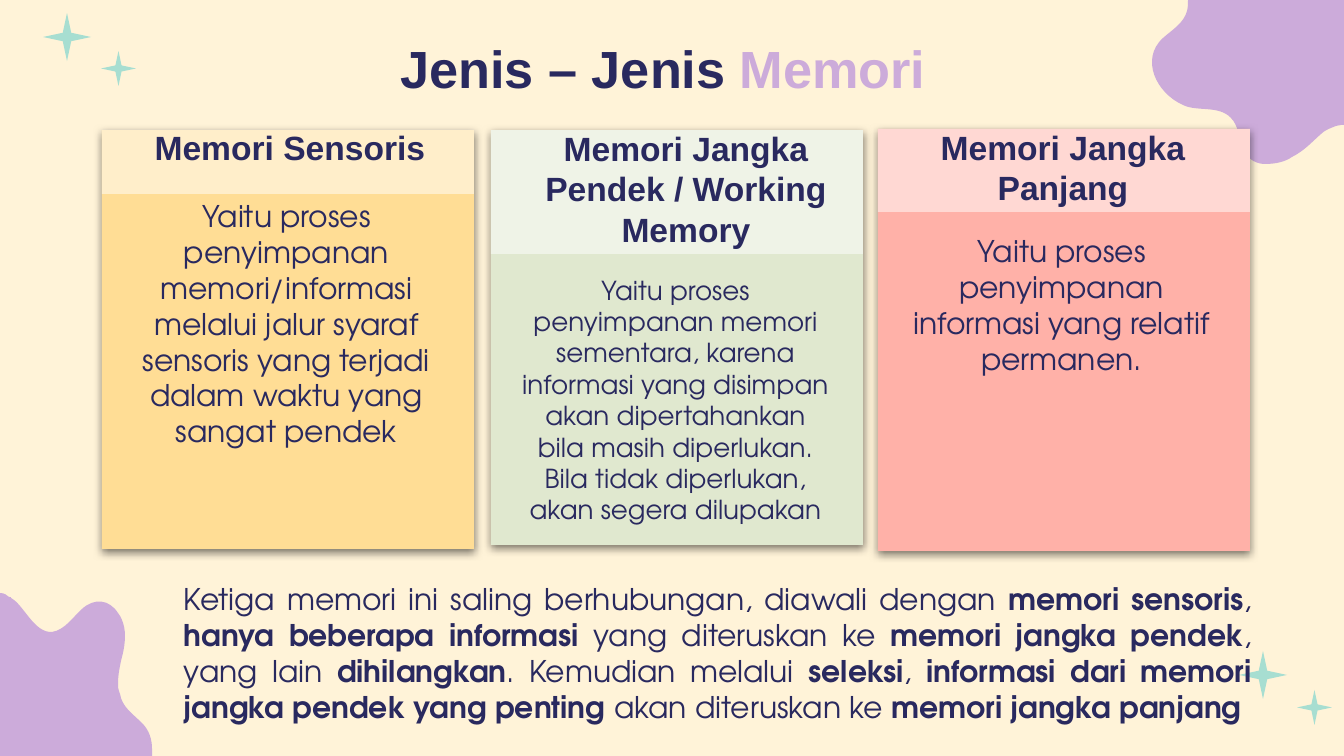
from lxml import etree
from pptx import Presentation
from pptx.dml.color import RGBColor
from pptx.enum.shapes import MSO_SHAPE
from pptx.enum.text import MSO_ANCHOR, PP_ALIGN
from pptx.oxml import parse_xml
from pptx.oxml.ns import nsdecls, qn
from pptx.util import Pt

RECT, STAR = MSO_SHAPE.RECTANGLE, MSO_SHAPE.STAR_4_POINT
CENTER, JUSTIFY = PP_ALIGN.CENTER, PP_ALIGN.JUSTIFY
TOP = MSO_ANCHOR.TOP

PX = 914400 / 134.4
WIDTH, HEIGHT = 1344, 756
CREAM, NAVY, LILAC, MINT, WHITE = "FFF3D8", "29295F", "CCABDA", "A7DED1", "FFFFFF"
HEAD_FONT, BODY_FONT = "Arial", "TeX Gyre Adventor"
INSET = 13
CARD_W, HEAD_W, BODY_W = 372, 358, 335

# Each blob: start point, Bézier segments (two handles and an end), closing corners
BLOBS = [
    ((152, 749), [
        ((152, 739), (149, 730), (142, 723)), ((133, 714), (122, 707), (120, 694)),
        ((118, 689), (118, 687), (118, 683)), ((118, 675), (120, 665), (122, 657)),
        ((124, 650), (125, 642), (125, 636)), ((125, 630), (124, 625), (122, 620)),
        ((121, 617), (120, 616), (118, 613)), ((109, 599), (94, 598), (82, 609)),
        ((73, 617), (65, 630), (52, 632)), ((34, 633), (24, 605), (11, 598)),
        ((11, 597), (11, 597), (9, 597)), ((7, 595), (4, 593), (0, 593)),
    ], [(0, 756), (152, 756)]),
    ((1188, 0), [
        ((1188, 4), (1188, 7), (1187, 11)), ((1184, 23), (1172, 30), (1163, 38)),
        ((1140, 59), (1156, 93), (1183, 105)), ((1197, 112), (1219, 105), (1231, 118)),
        ((1239, 126), (1239, 140), (1245, 151)), ((1247, 157), (1253, 163), (1263, 164)),
        ((1265, 164), (1265, 164), (1266, 164)), ((1275, 164), (1285, 162), (1292, 157)),
        ((1304, 151), (1312, 142), (1321, 134)), ((1325, 130), (1331, 128), (1336, 126)),
        ((1337, 126), (1340, 125), (1341, 125)), ((1343, 125), (1343, 125), (1344, 125)),
    ], [(1344, 0)]),
]

STARS = [(43, 13, 48), (101, 51, 35), (1239, 651, 48), (1297, 690, 35)]

CARDS = [
    dict(box=(102, 130, 419), head_h=64, fill="FFDD95",
         head="Memori Sensoris", head_box=(111, 114, 62),
         body="Yaitu proses penyimpanan memori/informasi melalui jalur syaraf "
              "sensoris yang terjadi dalam waktu yang sangat pendek",
         body_box=(119, 185, 286), size=16),
    dict(box=(491, 130, 415), head_h=124, fill="E0E8CF",
         head="Memori Jangka Pendek / Working Memory", head_box=(507, 115, 149),
         body="Yaitu proses penyimpanan memori sementara, karena informasi yang "
              "disimpan akan dipertahankan bila masih diperlukan. Bila tidak "
              "diperlukan, akan segera dilupakan",
         body_box=(508, 261, 121), size=14),
    dict(box=(878, 129, 422), head_h=83, fill="FFB1A8",
         head="Memori Jangka Panjang", head_box=(884, 114, 112),
         body="Yaitu proses penyimpanan informasi yang relatif permanen.",
         body_box=(894, 220, 121), size=16),
]

TITLE = [("Jenis – Jenis ", True, NAVY), ("Memori", True, LILAC)]
# Text between ** marks is bold
SUMMARY = ("Ketiga memori ini saling berhubungan, diawali dengan **memori sensoris**, "
           "**hanya beberapa informasi **yang diteruskan ke **memori jangka pendek**, "
           "yang lain **dihilangkan**. Kemudian melalui **seleksi**, **informasi dari "
           "memori jangka pendek yang penting **akan diteruskan ke "
           "**memori jangka panjang")


def px(n):
    return round(n * PX)


def rgb(color):
    return RGBColor.from_string(color)


def paint(s, color):
    s.shadow.inherit = False
    s.fill.solid()
    s.fill.fore_color.rgb = rgb(color)
    s.line.fill.background()
    return s


def add_shape(kind, x, y, w, h, color):
    return paint(slide.shapes.add_shape(kind, px(x), px(y), px(w), px(h)), color)


def add_blob(start, curves, corners):
    """Build the outline from straight segments, then join each three into a curve."""
    points = [point for curve in curves for point in curve] + corners
    builder = slide.shapes.build_freeform(*start, scale=PX)
    builder.add_line_segments(points, close=True)
    s = paint(builder.convert_to_shape(), LILAC)
    lines = list(s._element.iter(qn("a:lnTo")))
    for i in range(0, 3 * len(curves), 3):
        curve = etree.Element(qn("a:cubicBezTo"))
        lines[i].addprevious(curve)
        for line in lines[i:i + 3]:
            curve.append(line[0])
            line.getparent().remove(line)


def add_drop_shadow(s):
    effects = s._element.spPr.find(qn("a:effectLst"))
    effects.append(parse_xml(
        f'<a:outerShdw {nsdecls("a")} blurRad="57150" dist="19050" dir="5400000" '
        'algn="bl" rotWithShape="0"><a:srgbClr val="000000">'
        '<a:alpha val="50000"/></a:srgbClr></a:outerShdw>'))


def make_half_transparent(s):
    color = s._element.spPr.find(qn("a:solidFill"))[0]
    etree.SubElement(color, qn("a:alpha")).set("val", "50000")


def add_text(x, y, w, h, runs, font, size, align=CENTER, indent=0):
    """Add one paragraph; runs are (text, bold, color)."""
    tf = slide.shapes.add_textbox(px(x), px(y), px(w), px(h)).text_frame
    tf.word_wrap = True
    tf.vertical_anchor = TOP
    tf.margin_left = tf.margin_right = tf.margin_top = tf.margin_bottom = px(INSET)
    p = tf.paragraphs[0]
    p.alignment = align
    if indent:
        p._p.get_or_add_pPr().set("marL", str(px(indent)))
    for text, bold, color in runs:
        r = p.add_run()
        r.text = text
        r.font.name, r.font.size, r.font.bold = font, Pt(size), bold
        r.font.color.rgb = rgb(color)


prs = Presentation()
prs.slide_width, prs.slide_height = px(WIDTH), px(HEIGHT)
slide = prs.slides.add_slide(prs.slide_layouts[6])
slide.background.fill.solid()
slide.background.fill.fore_color.rgb = rgb(CREAM)

for blob in BLOBS:
    add_blob(*blob)
for x, y, size in STARS:
    add_shape(STAR, x, y, size, size, MINT).adjustments[0] = 0.125

add_text(96, 23, 1134, 85, TITLE, HEAD_FONT, 28)

for card in CARDS:
    x, y, h = card["box"]
    add_drop_shadow(add_shape(RECT, x, y, CARD_W, h, card["fill"]))
    make_half_transparent(add_shape(RECT, x, y, CARD_W, card["head_h"], WHITE))
    x, y, h = card["head_box"]
    add_text(x, y, HEAD_W, h, [(card["head"], True, NAVY)], HEAD_FONT, 18)
    x, y, h = card["body_box"]
    add_text(x, y, BODY_W, h, [(card["body"], False, NAVY)], BODY_FONT, card["size"])

summary_runs = [(text, i % 2 == 1, NAVY) for i, text in enumerate(SUMMARY.split("**"))]
add_text(152, 568, 1113, 177, summary_runs, BODY_FONT, 16, JUSTIFY, indent=19)

prs.save("out.pptx")
